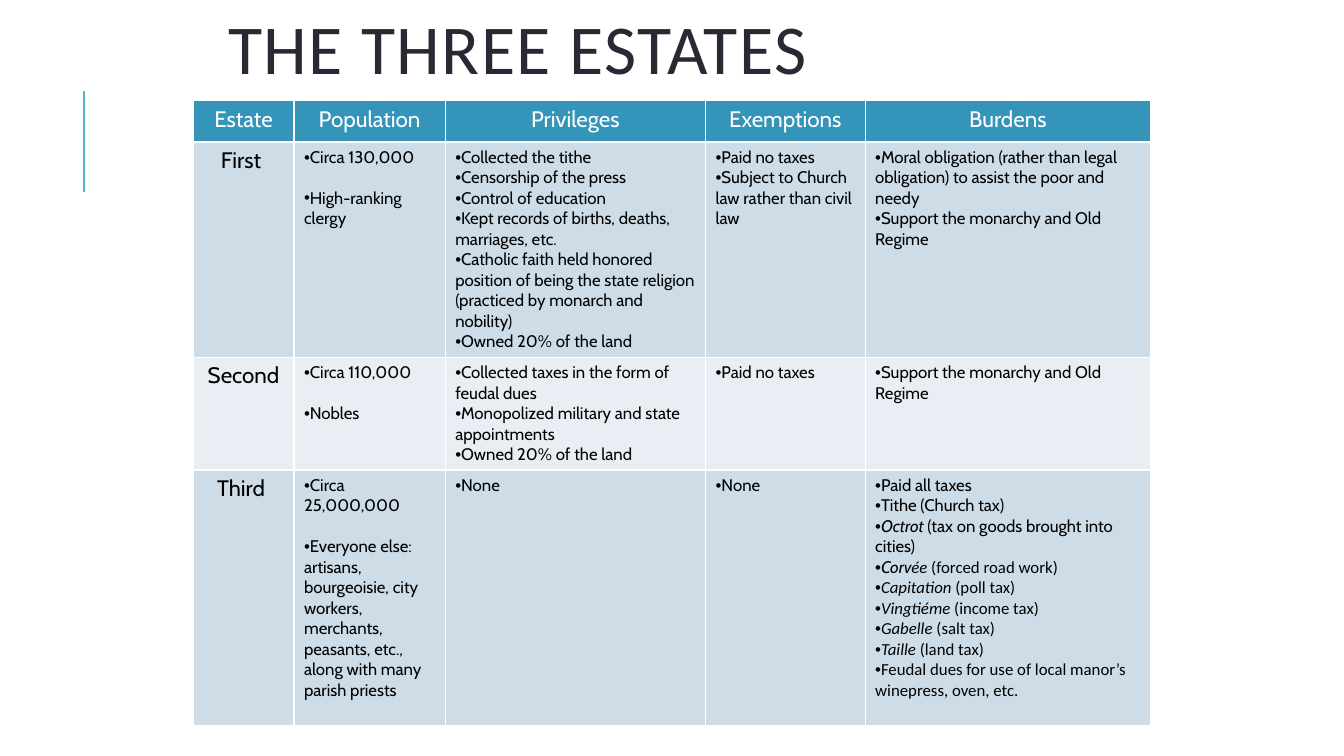
from dataclasses import dataclass

from lxml import etree
from pptx import Presentation
from pptx.dml.color import RGBColor
from pptx.enum.shapes import MSO_CONNECTOR
from pptx.enum.text import MSO_ANCHOR, MSO_AUTO_SIZE, PP_ALIGN
from pptx.oxml.ns import qn
from pptx.util import Pt

STRAIGHT = MSO_CONNECTOR.STRAIGHT
MIDDLE = MSO_ANCHOR.MIDDLE
NO_AUTOFIT = MSO_AUTO_SIZE.NONE
LEFT, CENTER = PP_ALIGN.LEFT, PP_ALIGN.CENTER

WHITE = RGBColor(0xFF, 0xFF, 0xFF)
BLACK = RGBColor(0, 0, 0)
INK = RGBColor(0x29, 0x28, 0x34)
TEAL = RGBColor(0x58, 0xB6, 0xC0)
HEADER_BLUE = RGBColor(0x34, 0x94, 0xBA)
BANDS = (RGBColor(0xCE, 0xDC, 0xE7), RGBColor(0xE8, 0xEE, 0xF3))

CABIN, CALIBRI, BULLET_FONT = "Cabin", "Calibri", "Arial"
HEADING_SIZE, BODY_SIZE = 16, 12
BLANK_LINE = 14.6


@dataclass(frozen=True)
class Span:
    text: str
    italic: bool = False
    font: str = CABIN


@dataclass(frozen=True)
class Bullet:
    spans: tuple[Span, ...]
    space_before: float = 0


@dataclass(frozen=True)
class Estate:
    name: str
    height: float
    population: list[Bullet]
    privileges: list[Bullet]
    exemptions: list[Bullet]
    burdens: list[Bullet]


def plain(*texts: str) -> list[Bullet]:
    return [Bullet((Span(text),)) for text in texts]


def population(count: str, members: str) -> list[Bullet]:
    return [Bullet((Span(count),)), Bullet((Span(members),), BLANK_LINE)]


def tax(name: str, meaning: str, font: str = CALIBRI) -> Bullet:
    return Bullet((Span(name, True, font), Span(f" ({meaning})", False, font)))


HEADINGS = ("Estate", "Population", "Privileges", "Exemptions", "Burdens")
COLUMN_WIDTHS = (72, 108, 186, 114, 204)
HEADER_HEIGHT = 29.4
ESTATES = (
    Estate(
        "First ", 153.6,
        population("Circa 130,000", "High-ranking clergy"),
        plain(
            "Collected the tithe",
            "Censorship of the press",
            "Control of education",
            "Kept records of births, deaths, marriages, etc.",
            "Catholic faith held honored position of being the state religion "
            "(practiced by monarch and nobility)",
            "Owned 20% of the land",
        ),
        plain("Paid no taxes", "Subject to Church law rather than civil law"),
        plain(
            "Moral obligation (rather than legal obligation) to assist the poor and needy",
            "Support the monarchy and Old Regime",
        ),
    ),
    Estate(
        "Second", 80.5,
        population("Circa 110,000", "Nobles"),
        plain(
            "Collected taxes in the form of feudal dues",
            "Monopolized military and state appointments",
            "Owned 20% of the land",
        ),
        plain("Paid no taxes"),
        plain("Support the monarchy and Old Regime"),
    ),
    Estate(
        "Third ", 182.5,
        population(
            "Circa 25,000,000",
            "Everyone else: artisans, bourgeoisie, city workers, merchants, "
            "peasants, etc., along with many parish priests",
        ),
        plain("None"),
        plain("None"),
        plain("Paid all taxes", "Tithe (Church tax)") + [
            tax("Octrot", "tax on goods brought into cities", CABIN),
            Bullet((
                Span("Corv", True),
                Span("ée", True, CALIBRI),
                Span(" (forced road work)", False, CALIBRI),
            )),
            tax("Capitation", "poll tax"),
            tax("Vingtiéme", "income tax"),
            tax("Gabelle", "salt tax"),
            tax("Taille", "land tax"),
            Bullet((Span(
                "Feudal dues for use of local manor’s winepress, oven, etc.",
                font=CALIBRI,
            ),)),
        ],
    ),
)


def fill_cell(cell, color: RGBColor) -> None:
    cell.fill.solid()
    cell.fill.fore_color.rgb = color


def write_heading(cell, text: str, color: RGBColor) -> None:
    paragraph = cell.text_frame.paragraphs[0]
    paragraph.text = text
    paragraph.alignment = CENTER
    font = paragraph.font
    font.name, font.size, font.bold = CABIN, Pt(HEADING_SIZE), False
    font.color.rgb = color


def write_bullets(cell, bullets: list[Bullet]) -> None:
    frame = cell.text_frame
    for index, bullet in enumerate(bullets):
        paragraph = frame.add_paragraph() if index else frame.paragraphs[0]
        paragraph.space_before = Pt(bullet.space_before)
        properties = paragraph._p.get_or_add_pPr()
        etree.SubElement(properties, qn("a:buFont"), typeface=BULLET_FONT)
        etree.SubElement(properties, qn("a:buChar"), char="•")
        paragraph.font.size = Pt(BODY_SIZE)
        paragraph.font.color.rgb = BLACK
        for span in bullet.spans:
            run = paragraph.add_run()
            run.text = span.text
            run.font.name, run.font.italic = span.font, span.italic


def add_title(slide) -> None:
    title = slide.shapes.title
    title.left, title.top, title.width, title.height = Pt(156), Pt(0), Pt(648), Pt(78)
    frame = title.text_frame
    frame.auto_size, frame.vertical_anchor = NO_AUTOFIT, MIDDLE
    paragraph = frame.paragraphs[0]
    paragraph.alignment, paragraph.line_spacing = LEFT, 0.8
    run = paragraph.add_run()
    run.text = "THE THREE ESTATES"
    paragraph.font.name, paragraph.font.size = CALIBRI, Pt(50)
    paragraph.font.color.rgb = INK
    run._r.get_or_add_rPr().set("spc", "100")


def add_accent_line(slide) -> None:
    line = slide.shapes.add_connector(STRAIGHT, Pt(60), Pt(136.8), Pt(60), Pt(64.8))
    line.line.color.rgb, line.line.width = TEAL, Pt(1.5)
    etree.SubElement(line._element.spPr, qn("a:effectLst"))


def add_estates_table(slide) -> None:
    heights = [HEADER_HEIGHT] + [estate.height for estate in ESTATES]
    table = slide.shapes.add_table(
        len(heights), len(HEADINGS), Pt(138), Pt(72),
        Pt(sum(COLUMN_WIDTHS)), Pt(sum(heights)),
    ).table
    for column, width in zip(table.columns, COLUMN_WIDTHS):
        column.width = Pt(width)
    for row, height in zip(table.rows, heights):
        row.height = Pt(height)
    for column, heading in enumerate(HEADINGS):
        fill_cell(table.cell(0, column), HEADER_BLUE)
        write_heading(table.cell(0, column), heading, WHITE)
    for row, estate in enumerate(ESTATES, start=1):
        for column in range(len(HEADINGS)):
            fill_cell(table.cell(row, column), BANDS[(row - 1) % len(BANDS)])
        write_heading(table.cell(row, 0), estate.name, BLACK)
        details = (estate.population, estate.privileges, estate.exemptions, estate.burdens)
        for column, bullets in enumerate(details, start=1):
            write_bullets(table.cell(row, column), bullets)


def main() -> None:
    presentation = Presentation()
    presentation.slide_width, presentation.slide_height = Pt(960), Pt(540)
    slide = presentation.slides.add_slide(presentation.slide_layouts[5])
    add_accent_line(slide)
    add_title(slide)
    add_estates_table(slide)
    presentation.save("out.pptx")


if __name__ == "__main__":
    main()
